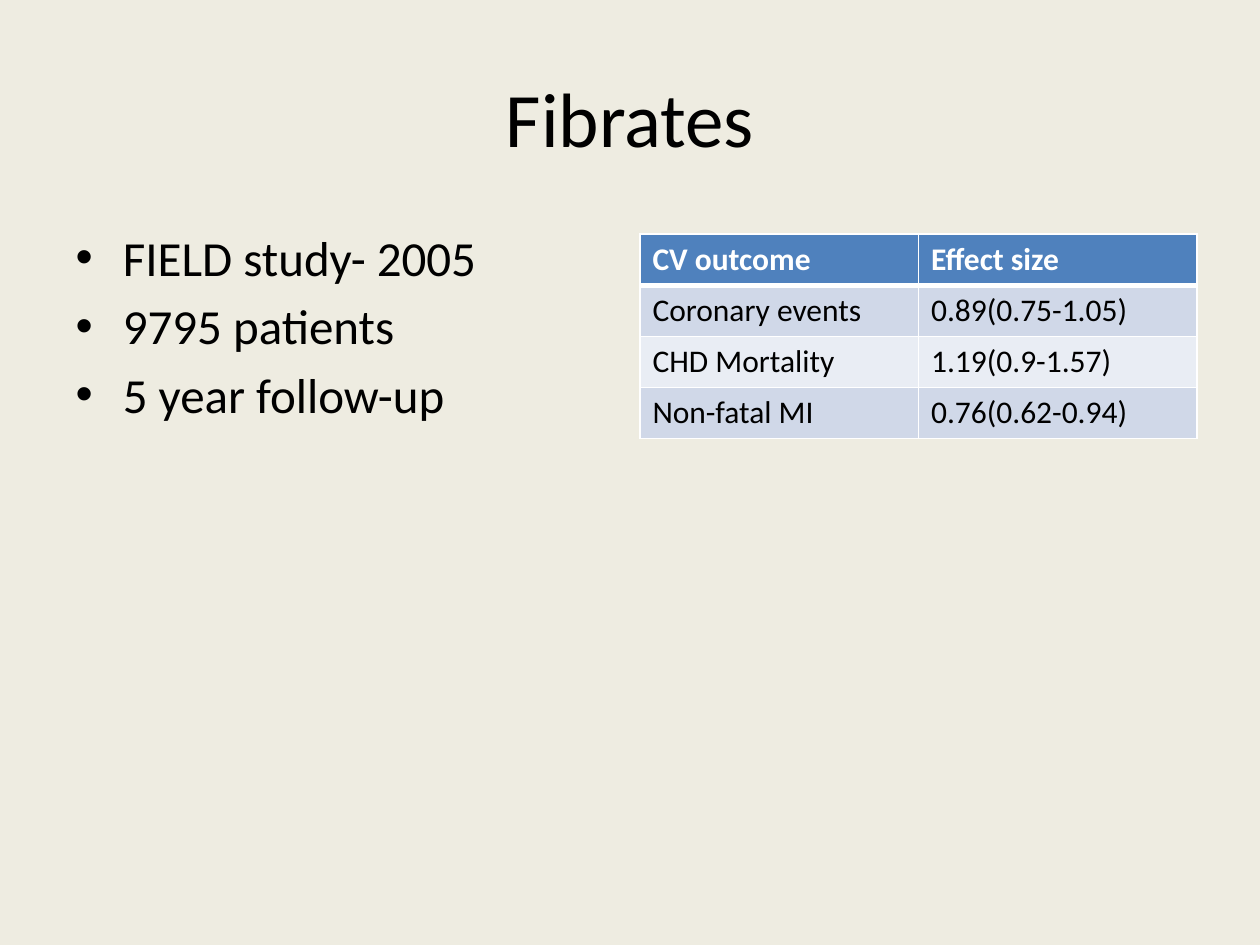
import pptx
import pptx.dml.color
import pptx.enum.text
import pptx.oxml
import pptx.oxml.ns
import pptx.util
from pptx.util import Cm

RGBColor = pptx.dml.color.RGBColor
BACKGROUND = RGBColor(0xEE, 0xEC, 0xE1)
BLACK = RGBColor(0, 0, 0)
WHITE = RGBColor(0xFF, 0xFF, 0xFF)
HEADER = RGBColor(0x4F, 0x81, 0xBD)
BANDS = (RGBColor(0xD0, 0xD8, 0xE8), RGBColor(0xE9, 0xED, 0xF4))
FONT = "Calibri"

STUDY_FACTS = ("FIELD study- 2005", "9795 patients", "5 year follow-up")
OUTCOMES = (
    ("CV outcome", "Effect size"),
    ("Coronary events", "0.89(0.75-1.05)"),
    ("CHD Mortality", "1.19(0.9-1.57)"),
    ("Non-fatal MI", "0.76(0.62-0.94)"),
)


def format_runs(paragraph, size, color, bold=False):
    for run in paragraph.runs:
        run.font.name = FONT
        run.font.size = pptx.util.Pt(size)
        run.font.color.rgb = color
        run.font.bold = bold


def place(placeholder, box):
    placeholder.left, placeholder.top, placeholder.width, placeholder.height = box


def set_borders(cell, widths):
    properties = cell._tc.get_or_add_tcPr()
    for side, width in widths.items():
        properties.append(pptx.oxml.parse_xml(
            f'<a:{side} {pptx.oxml.ns.nsdecls("a")} w="{pptx.util.Pt(width)}">'
            f'<a:solidFill><a:srgbClr val="{WHITE}"/></a:solidFill></a:{side}>'
        ))


def add_heading(slide, box):
    heading = slide.shapes.title
    place(heading, box)
    heading.text_frame.text = "Fibrates"
    heading.text_frame.vertical_anchor = pptx.enum.text.MSO_ANCHOR.MIDDLE
    heading.text_frame.paragraphs[0].alignment = pptx.enum.text.PP_ALIGN.CENTER
    format_runs(heading.text_frame.paragraphs[0], 44, BLACK)


def add_study_facts(slide, box):
    facts = slide.placeholders[1]
    place(facts, box)
    facts.text_frame.text = "\n".join(STUDY_FACTS)
    for paragraph in facts.text_frame.paragraphs:
        format_runs(paragraph, 28, BLACK)


def add_outcomes(slide, box):
    outcomes = slide.shapes.add_table(len(OUTCOMES), len(OUTCOMES[0]), *box).table
    for row, texts in enumerate(OUTCOMES):
        is_header = row == 0
        widths = {"lnL": 1, "lnR": 1, "lnT": 3 if row == 1 else 1, "lnB": 3 if is_header else 1}
        for column, text in enumerate(texts):
            cell = outcomes.cell(row, column)
            cell.text_frame.text = text
            format_runs(cell.text_frame.paragraphs[0], 18, WHITE if is_header else BLACK, is_header)
            set_borders(cell, widths)
            cell.fill.solid()
            cell.fill.fore_color.rgb = HEADER if is_header else BANDS[(row - 1) % 2]


def main():
    presentation = pptx.Presentation()
    presentation.slide_width, presentation.slide_height = Cm(25.4), Cm(19.05)
    slide = presentation.slides.add_slide(presentation.slide_layouts[1])
    slide.background.fill.solid()
    slide.background.fill.fore_color.rgb = BACKGROUND

    margin, column_width = Cm(1.27), Cm(11.23)
    content_width = presentation.slide_width - 2 * margin
    right_column = presentation.slide_width - margin - column_width
    add_heading(slide, (margin, Cm(0.76), content_width, Cm(3.18)))
    add_study_facts(slide, (margin, Cm(4.45), column_width, Cm(12.57)))
    add_outcomes(slide, (right_column, Cm(4.72), column_width, Cm(4.11)))
    presentation.save("out.pptx")


if __name__ == "__main__":
    main()
